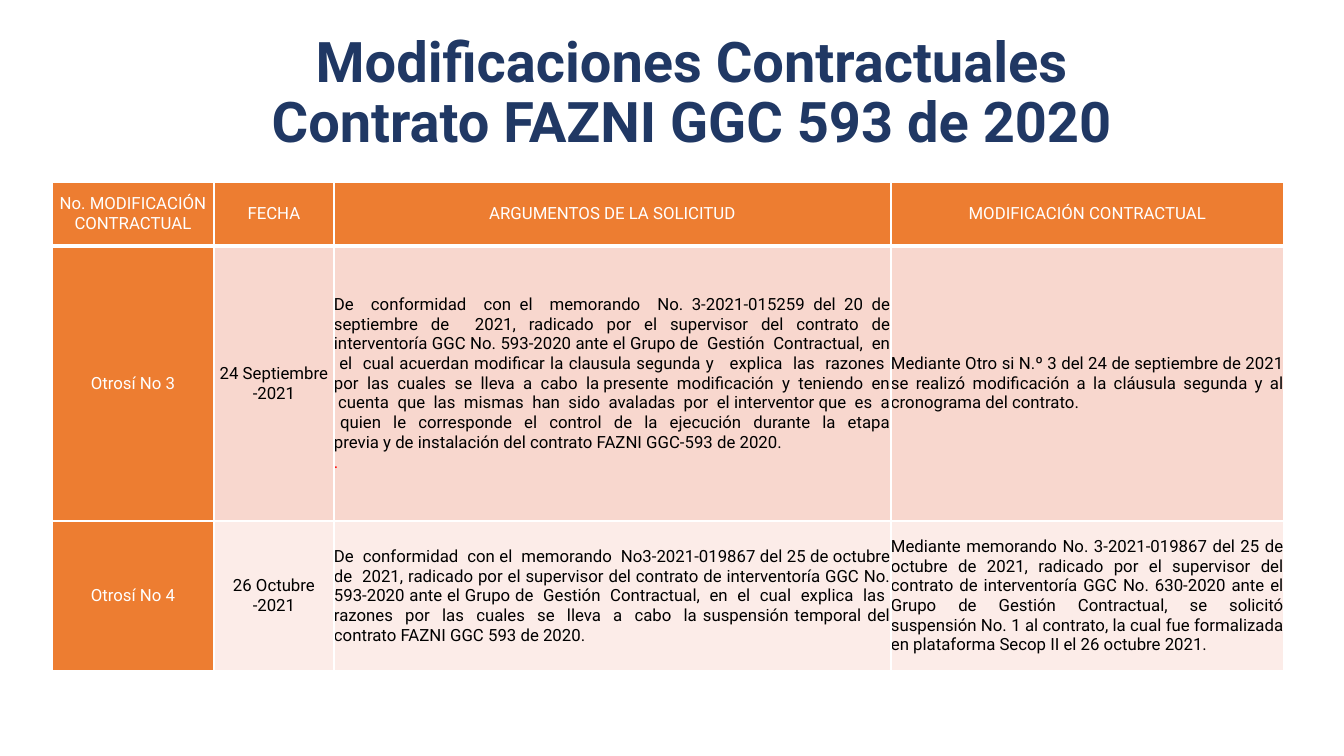
from dataclasses import dataclass

import pptx
import pptx.dml.color
import pptx.enum.text
import pptx.oxml
import pptx.oxml.ns
import pptx.util

ALIGN = pptx.enum.text.PP_ALIGN
ANCHOR = pptx.enum.text.MSO_ANCHOR
NO_MARGINS = dict.fromkeys(
    ("margin_left", "margin_right", "margin_top", "margin_bottom"), 0)


@dataclass(frozen=True)
class Theme:
    font: str = "Roboto"
    title_size: int = 40
    table_size: int = 12
    navy: str = "203864"
    orange: str = "ED7D31"
    bands: tuple = ("F8D7CE", "FCECE8")
    white: str = "FFFFFF"
    black: str = "000000"
    red: str = "FF0000"
    rule: int = 1
    header_rule: int = 3


def px(length):
    return pptx.util.Emu(round(length * 914400 / 100.8))


def rgb(color):
    return pptx.dml.color.RGBColor.from_string(color)


def apply_formats(target, formats):
    for name, value in formats.items():
        setattr(target, name, value)


class SlideBuilder:
    def __init__(self, slide, theme):
        self.slide = slide
        self.theme = theme

    def fill_text(self, frame, lines, size, align, bold=False, line_spacing=None):
        """Fill a text frame with (text, color) paragraphs."""
        for index, (text, color) in enumerate(lines):
            paragraph = frame.add_paragraph() if index else frame.paragraphs[0]
            apply_formats(paragraph, {"alignment": align,
                                      "line_spacing": line_spacing})
            run = paragraph.add_run()
            run.text = text
            apply_formats(run.font, {"name": self.theme.font, "bold": bold,
                                     "size": pptx.util.Pt(size)})
            run.font.color.rgb = rgb(color)

    def title(self, text, left, top, width, height):
        frame = self.slide.shapes.add_textbox(
            px(left), px(top), px(width), px(height)).text_frame
        apply_formats(frame, {"word_wrap": True, "vertical_anchor": ANCHOR.BOTTOM,
                              "margin_left": px(20), "margin_right": px(20)})
        self.fill_text(frame, [(text, self.theme.navy)], self.theme.title_size,
                       ALIGN.CENTER, bold=True, line_spacing=0.9)

    def borders(self, cell, **widths):
        """Add white cell borders; widths are in points, keyed L, R, T, B."""
        properties = cell._tc.get_or_add_tcPr()
        for side, width in widths.items():
            properties.append(pptx.oxml.parse_xml(
                f'<a:ln{side} {pptx.oxml.ns.nsdecls("a")} w="{pptx.util.Pt(width)}">'
                f'<a:solidFill><a:srgbClr val="{self.theme.white}"/></a:solidFill>'
                f'</a:ln{side}>'))

    def cell(self, cell, lines, fill, align, top_rule, bottom_rule):
        apply_formats(cell, {"vertical_anchor": ANCHOR.MIDDLE, **NO_MARGINS})
        self.borders(cell, L=self.theme.rule, R=self.theme.rule,
                     T=top_rule, B=bottom_rule)
        cell.fill.solid()
        cell.fill.fore_color.rgb = rgb(fill)
        self.fill_text(cell.text_frame, lines, self.theme.table_size, align)

    def table(self, rows, left, top, widths, heights):
        """Draw a table with an orange header row and first column."""
        theme = self.theme
        table = self.slide.shapes.add_table(
            len(rows), len(widths), px(left), px(top),
            px(sum(widths)), px(sum(heights))).table
        apply_formats(table, {"first_row": False, "horz_banding": False})
        for column, width in zip(table.columns, widths):
            column.width = px(width)
        for row, height in zip(table.rows, heights):
            row.height = px(height)
        for r, row in enumerate(rows):
            for c, lines in enumerate(row):
                heading = r == 0 or c == 0
                color = theme.white if heading else theme.black
                self.cell(
                    table.cell(r, c),
                    [line if isinstance(line, tuple) else (line, color)
                     for line in lines],
                    theme.orange if heading else theme.bands[(r - 1) % 2],
                    ALIGN.JUSTIFY if r and c > 1 else ALIGN.CENTER,
                    theme.header_rule if r == 1 else theme.rule,
                    theme.header_rule if r == 0 else theme.rule)


THEME = Theme()
MODIFICATIONS = [
    [["No. MODIFICACIÓN CONTRACTUAL"], ["FECHA"],
     ["ARGUMENTOS DE LA SOLICITUD"], ["MODIFICACIÓN CONTRACTUAL"]],
    [["Otrosí No 3"], ["24 Septiembre", "-2021"],
     ["De  conformidad  con el  memorando  No. 3-2021-015259 del 20 de "
      "septiembre de  2021, radicado por el supervisor del contrato de "
      "interventoría GGC No. 593-2020 ante el Grupo de  Gestión  Contractual,  "
      "en  el  cual acuerdan modificar la clausula segunda y   explica  las  "
      "razones  por  las  cuales  se  lleva  a  cabo  la presente  modificación  "
      "y  teniendo  en  cuenta  que  las  mismas  han  sido  avaladas  por  el "
      "interventor que  es  a  quien  le  corresponde  el  control  de  la  "
      "ejecución  durante  la  etapa previa y de instalación del contrato FAZNI "
      "GGC-593 de 2020.",
      (".", THEME.red)],
     ["Mediante Otro si N.º 3 del 24 de septiembre de 2021 se realizó "
      "modificación a la cláusula segunda y al cronograma del contrato."]],
    [["Otrosí No 4"], ["26 Octubre", "-2021"],
     ["De  conformidad  con el  memorando  No3-2021-019867 del 25 de octubre de  "
      "2021, radicado por el supervisor del contrato de interventoría GGC No. "
      "593-2020 ante el Grupo de  Gestión  Contractual,  en  el  cual  explica  "
      "las  razones  por  las  cuales  se  lleva  a  cabo  la suspensión temporal "
      "del contrato FAZNI GGC 593 de 2020."],
     ["Mediante memorando No. 3-2021-019867 del 25 de octubre de 2021, radicado "
      "por el supervisor del contrato de interventoría GGC No. 630-2020 ante el "
      "Grupo de Gestión Contractual, se solicitó suspensión No. 1 al contrato, la "
      "cual fue formalizada en plataforma Secop II el 26 octubre 2021."]],
]


def main():
    presentation = pptx.Presentation()
    apply_formats(presentation, {"slide_width": px(1344), "slide_height": px(756)})
    slide = presentation.slides.add_slide(presentation.slide_layouts[6])
    builder = SlideBuilder(slide, THEME)
    builder.title("Modificaciones Contractuales Contrato FAZNI GGC 593 de 2020",
                  191, 67, 1001, 93)
    builder.table(MODIFICATIONS, 52, 182,
                  widths=(162, 120, 557, 393), heights=(64, 275, 150))
    presentation.save("out.pptx")


if __name__ == "__main__":
    main()
